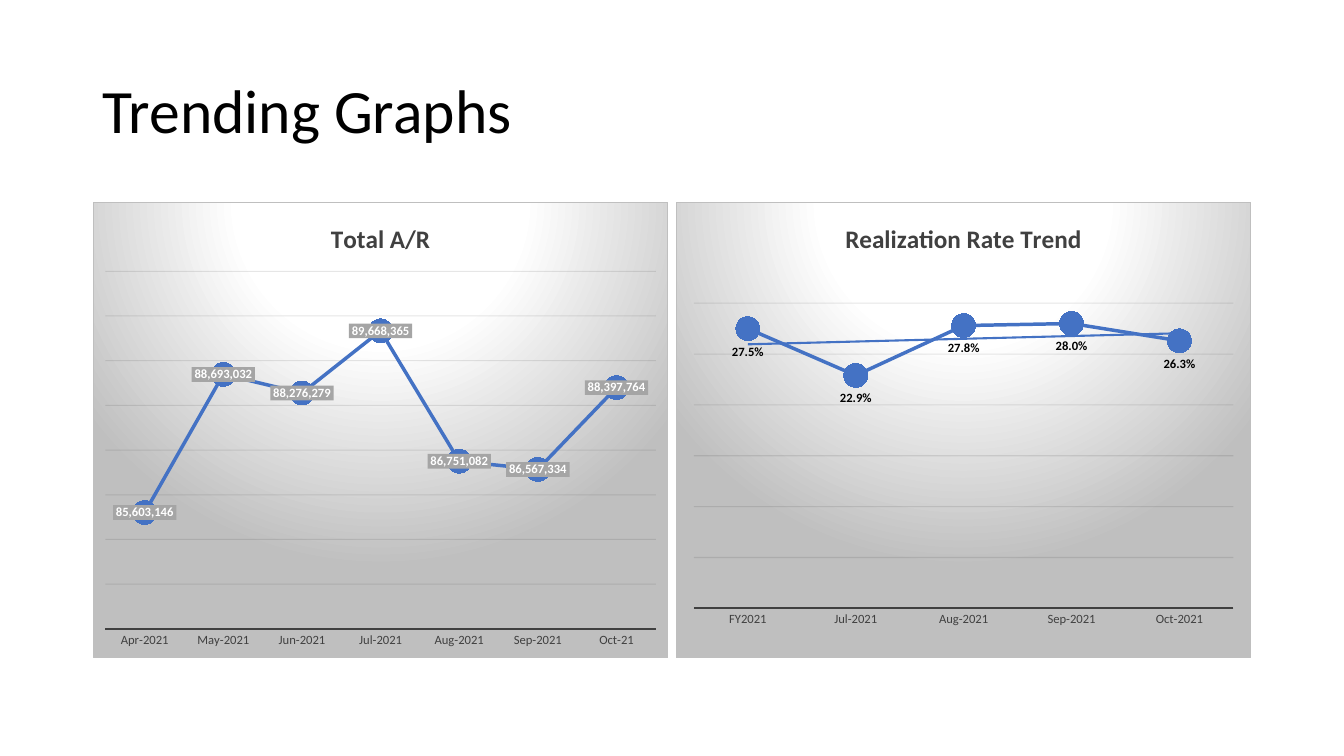
"""Build the Trending Graphs slide with two line charts."""
from dataclasses import dataclass

import lxml.etree
import pptx
import pptx.chart.data
import pptx.dml.color
import pptx.enum.chart
import pptx.enum.text
import pptx.oxml
import pptx.oxml.ns
import pptx.util
from pptx.util import Inches, Pt


@dataclass(frozen=True)
class Theme:
    font: str = "Calibri"
    black: str = "000000"
    white: str = "FFFFFF"
    dark: str = "404040"
    grid: str = "0D0D0D"
    panel: str = "BFBFBF"
    tag: str = "A5A5A5"
    series: str = "4472C4"
    heading_size: int = 44
    title_size: int = 18
    base_size: int = 10
    label_size: int = 9


theme = Theme()
NS = pptx.oxml.ns.nsdecls("c", "a")


def xml(text):
    return pptx.oxml.parse_xml(text.replace(">", f" {NS}>", 1))


def style_font(font, size, color, bold=False):
    font.name = theme.font
    font.size = Pt(size)
    font.bold = bold
    font.color.rgb = pptx.dml.color.RGBColor.from_string(color)


rgb = pptx.dml.color.RGBColor.from_string
Position = pptx.enum.chart.XL_LABEL_POSITION
ACCOUNTING = r'_(* #,##0_);_(* \(#,##0\);_(* "-"??_);_(@_)'
PANEL = f"""<c:spPr><a:gradFill><a:gsLst>
<a:gs pos="0"><a:srgbClr val="{theme.white}"/></a:gs>
<a:gs pos="39000"><a:srgbClr val="{theme.white}"/></a:gs>
<a:gs pos="100000"><a:srgbClr val="{theme.panel}"/></a:gs></a:gsLst>
<a:path path="circle"><a:fillToRect l="50000" t="-80000" r="50000" b="180000"/></a:path></a:gradFill>
<a:ln w="9525"><a:solidFill><a:srgbClr val="{theme.panel}"/></a:solidFill></a:ln></c:spPr>"""
TAG = f'<c:spPr><a:solidFill><a:srgbClr val="{theme.tag}"/></a:solidFill></c:spPr>'
TREND = f"""<c:trendline><c:spPr><a:ln w="19050"><a:solidFill><a:srgbClr val="{theme.series}"/></a:solidFill></a:ln></c:spPr>
<c:trendlineType val="linear"/><c:dispRSqr val="0"/><c:dispEq val="0"/></c:trendline>"""

charts = [
    dict(title="Realization Rate Trend", left=6.7, plot=(0.031, 0.222, 0.939, 0.67),
         cats=["FY2021", "Jul-2021", "Aug-2021", "Sep-2021", "Oct-2021"],
         values=[0.275, 0.229, 0.278, 0.28, 0.263],
         fmt="0.0%", scale=(0, 0.3, 0.05), pos=Position.BELOW,
         label_color=theme.black, tagged=False, trend=True),
    dict(title="Total A/R", left=0.92, plot=(0.021, 0.152, 0.958, 0.785),
         cats=["Apr-2021", "May-2021", "Jun-2021", "Jul-2021", "Aug-2021", "Sep-2021", "Oct-21"],
         values=[85603146, 88693032, 88276279, 89668365, 86751082, 86567334, 88397764],
         fmt=ACCOUNTING, scale=(83000000, 91000000, 1000000), pos=Position.CENTER,
         label_color=theme.white, tagged=True, trend=False),
]

prs = pptx.Presentation()
prs.slide_width, prs.slide_height = Inches(13.33), Inches(7.5)
s = prs.slides.add_slide(prs.slide_layouts[6])

tf = s.shapes.add_textbox(Inches(0.92), Inches(0.4), Inches(11.5), Inches(1.45)).text_frame
tf.word_wrap = True
tf.vertical_anchor = pptx.enum.text.MSO_ANCHOR.MIDDLE
p = tf.paragraphs[0]
p.text = "Trending Graphs"
p.line_spacing = 0.9
style_font(p.font, theme.heading_size, theme.black)

for spec_row in charts:
    data = pptx.chart.data.CategoryChartData(number_format=spec_row["fmt"])
    data.categories = spec_row["cats"]
    data.add_series("Series 1", spec_row["values"])
    chart = s.shapes.add_chart(
        pptx.enum.chart.XL_CHART_TYPE.LINE_MARKERS, Inches(spec_row["left"]), Inches(2),
        Inches(5.71), Inches(4.53), data).chart
    chart.has_legend = False
    style_font(chart.font, theme.base_size, theme.black)
    chart.has_title = True
    p = chart.chart_title.text_frame.paragraphs[0]
    p.text = spec_row["title"]
    style_font(p.font, theme.title_size, theme.dark, True)
    chart.chart_title.include_in_layout = False

    axis = chart.category_axis
    axis.major_tick_mark = pptx.enum.chart.XL_TICK_MARK.NONE
    axis.format.line.color.rgb = rgb(theme.dark)
    axis.format.line.width = Pt(1.5)
    style_font(axis.tick_labels.font, theme.label_size, theme.dark)

    axis = chart.value_axis
    axis.minimum_scale, axis.maximum_scale, axis.major_unit = spec_row["scale"]
    axis.has_major_gridlines = True
    line = axis.major_gridlines.format.line
    line.color.rgb = rgb(theme.grid)
    line.width = Pt(0.75)
    axis.visible = False

    chart.plots[0].vary_by_categories = False
    series = chart.plots[0].series[0]
    series.smooth = False
    series.format.line.color.rgb = rgb(theme.series)
    series.format.line.width = Pt(2.5)
    series.marker.style = pptx.enum.chart.XL_MARKER_STYLE.CIRCLE
    series.marker.size = 17
    series.marker.format.fill.solid()
    series.marker.format.fill.fore_color.rgb = rgb(theme.series)
    series.marker.format.line.fill.background()

    labels = series.data_labels
    labels.show_value = True
    labels.number_format = spec_row["fmt"]
    labels.number_format_is_linked = False
    labels.position = spec_row["pos"]
    style_font(labels.font, theme.label_size, spec_row["label_color"], True)

    root = chart.element
    for color in root.xpath(".//c:majorGridlines//a:srgbClr"):
        lxml.etree.SubElement(color, pptx.oxml.ns.qn("a:alpha"), val="10000")
    if spec_row["tagged"]:
        root.xpath(".//c:ser/c:dLbls/c:numFmt")[0].addnext(xml(TAG))
    if spec_row["trend"]:
        root.xpath(".//c:ser/c:cat")[0].addprevious(xml(TREND))
    root.xpath("./c:chart")[0].addnext(xml(PANEL))

    plot_area = root.xpath(".//c:plotArea")[0]
    for layout in plot_area.xpath("./c:layout"):
        plot_area.remove(layout)
    x, y, w, h = spec_row["plot"]
    plot_area.insert(0, xml(f"""<c:layout><c:manualLayout><c:layoutTarget val="inner"/>
<c:xMode val="edge"/><c:yMode val="edge"/><c:x val="{x}"/><c:y val="{y}"/>
<c:w val="{w}"/><c:h val="{h}"/></c:manualLayout></c:layout>"""))

prs.save("out.pptx")
